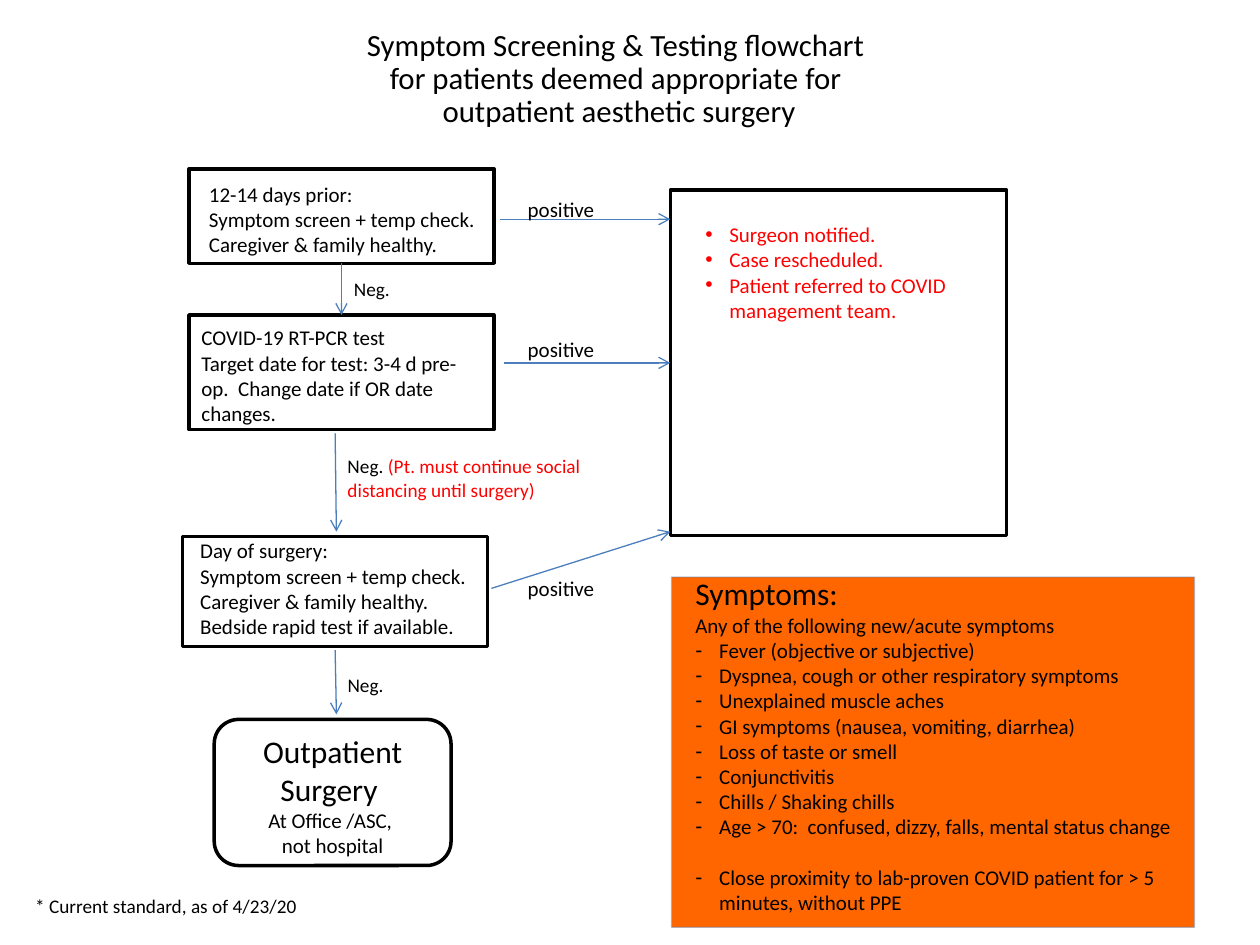
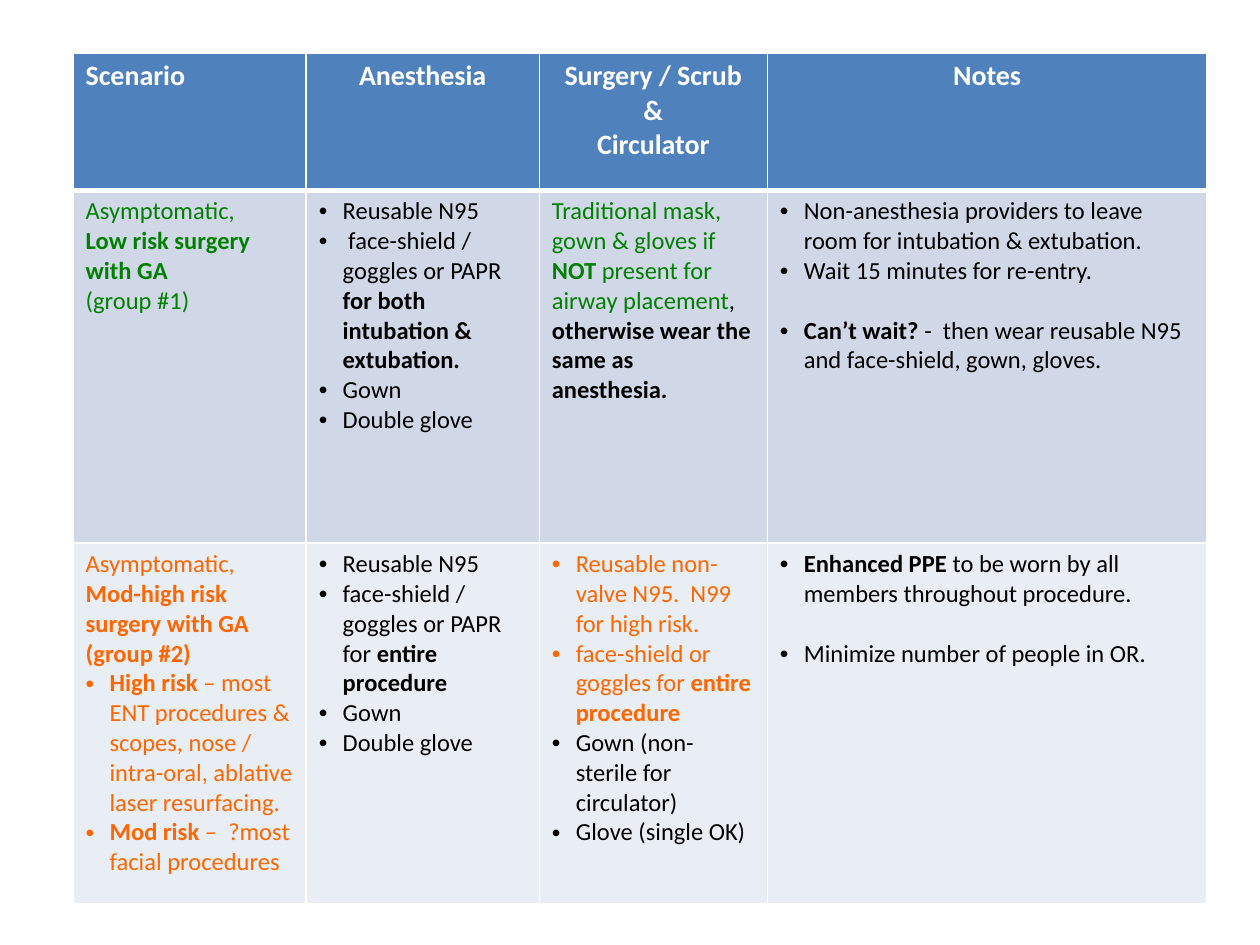
"""Build a surgery screening flowchart and a protective equipment table."""
import lxml.etree
import pptx
import pptx.dml.color
import pptx.enum.dml
import pptx.enum.shapes
import pptx.enum.text
import pptx.oxml
import pptx.oxml.ns
import pptx.util

SLIDE_WIDTH = pptx.util.Inches(10)
SLIDE_HEIGHT = pptx.util.Inches(7.5)
GRID_COLUMNS, GRID_ROWS = 100, 75
FONT = "Calibri"
BLACK, WHITE, RED, GREEN = "000000", "FFFFFF", "FF0000", "008000"
ORANGE, ARROW_BLUE, HEADER_BLUE = "FF6600", "4B7EBC", "4F81BD"
BAND_FILLS = ["D0D8E8", "E9EDF4"]
HANGING_INDENT = pptx.util.Inches(0.19)
LINE_FACTOR = 1.22
CENTER = pptx.enum.text.PP_ALIGN.CENTER
LEFT = pptx.enum.text.PP_ALIGN.LEFT
RECTANGLE = pptx.enum.shapes.MSO_SHAPE.RECTANGLE
ROUNDED = pptx.enum.shapes.MSO_SHAPE.ROUNDED_RECTANGLE


def across(columns):
    """Turn grid columns into a length."""
    return round(SLIDE_WIDTH * columns / GRID_COLUMNS)


def down(rows):
    """Turn grid rows into a length."""
    return round(SLIDE_HEIGHT * rows / GRID_ROWS)


def area(left, top, width, height):
    """Turn a grid area into a shape's position and size."""
    return across(left), down(top), across(width), down(height)


def paint(color_holder, color):
    """Apply a hex colour to a solid fill or a line."""
    if hasattr(color_holder, "solid"):
        color_holder.solid()
        color_holder.fore_color.rgb = pptx.dml.color.RGBColor.from_string(color)
    else:
        color_holder.color.rgb = pptx.dml.color.RGBColor.from_string(color)


def line(*parts, bullet=None, size=12, color=BLACK, align=LEFT, spacing=None, gap=0):
    """Describe a paragraph whose parts are texts or (text, colour) pairs."""
    return dict(parts=parts, bullet=bullet, size=size, color=color,
                align=align, spacing=spacing, gap=gap)


def bullets(*texts, mark="•", **style):
    """Describe one bulleted paragraph for each text."""
    return [line(text, bullet=mark, **style) for text in texts]


def split_bold(parts, color):
    """Yield text, colour and boldness, with bold marked by double asterisks."""
    for part in parts:
        text, part_color = (part, color) if isinstance(part, str) else part
        for index, piece in enumerate(text.split("**")):
            if piece:
                yield piece, part_color, index % 2 == 1


def add_bullet(paragraph, mark):
    """Give a paragraph a hanging bullet."""
    properties = paragraph._p.get_or_add_pPr()
    properties.set("marL", str(HANGING_INDENT))
    properties.set("indent", str(-HANGING_INDENT))
    for tag, name, value in [("a:buFont", "typeface", "Arial"), ("a:buChar", "char", mark)]:
        lxml.etree.SubElement(properties, pptx.oxml.ns.qn(tag)).set(name, value)


def write(frame, lines):
    """Fill a text frame with described paragraphs."""
    for index, item in enumerate(lines):
        paragraph = frame.add_paragraph() if index else frame.paragraphs[0]
        paragraph.alignment = item["align"]
        paragraph.line_spacing = item["spacing"]
        if item["gap"]:
            paragraph.space_after = pptx.util.Pt(item["gap"] * item["size"] * LINE_FACTOR)
        if item["bullet"]:
            add_bullet(paragraph, item["bullet"])
        for order, (text, color, bold) in enumerate(split_bold(item["parts"], item["color"])):
            if order:
                runs = [paragraph.add_run()]
                runs[0].text = text
            else:
                paragraph.text = text
                runs = paragraph.runs
            for run in runs:
                run.font.name = FONT
                run.font.size = pptx.util.Pt(item["size"])
                run.font.bold = bold
                paint(run.font.fill, color)


def add_words(slide, place, lines, anchor=pptx.enum.text.MSO_ANCHOR.TOP):
    """Add wrapped text on a grid area."""
    frame = slide.shapes.add_textbox(*area(*place)).text_frame
    frame.word_wrap = True
    frame.vertical_anchor = anchor
    write(frame, lines)


def add_box(slide, place, outline=RECTANGLE):
    """Add an unfilled box with a black border."""
    box = slide.shapes.add_shape(outline, *area(*place))
    box.shadow.inherit = False
    box.fill.background()
    paint(box.line, BLACK)
    box.line.width = pptx.util.Pt(2)
    return box


def add_symptom_panel(slide, place):
    """Add the orange panel with its faint border."""
    panel = slide.shapes.add_shape(RECTANGLE, *area(*place))
    panel.shadow.inherit = False
    paint(panel.fill, ORANGE)
    paint(panel.line, ARROW_BLUE)
    panel.line.width = pptx.util.Pt(0.75)
    border_color = panel.line._ln.find(".//" + pptx.oxml.ns.qn("a:srgbClr"))
    lxml.etree.SubElement(border_color, pptx.oxml.ns.qn("a:alpha")).set("val", "38000")


def add_arrow(slide, start, end, source=None, target=None):
    """Add an arrow, joined to (box, side) pairs where given."""
    arrow = slide.shapes.add_connector(
        pptx.enum.shapes.MSO_CONNECTOR.STRAIGHT,
        across(start[0]), down(start[1]), across(end[0]), down(end[1]))
    if source:
        arrow.begin_connect(*source)
    if target:
        arrow.end_connect(*target)
    paint(arrow.line, ARROW_BLUE)
    arrow.line.width = pptx.util.Pt(0.75)
    head = lxml.etree.SubElement(arrow.line._ln, pptx.oxml.ns.qn("a:tailEnd"))
    head.set("type", "arrow")
    lxml.etree.SubElement(arrow._element.spPr, pptx.oxml.ns.qn("a:effectLst"))


def set_borders(cell, top, bottom):
    """Give a cell white borders, with top and bottom widths in points."""
    properties = cell._tc.get_or_add_tcPr()
    widths = {"L": 1, "R": 1, "T": top, "B": bottom}
    for position, (side, width) in enumerate(widths.items()):
        border = pptx.oxml.parse_xml(
            f'<a:ln{side} {pptx.oxml.ns.nsdecls("a")} w="{pptx.util.Pt(width)}">'
            f'<a:solidFill><a:srgbClr val="{WHITE}"/></a:solidFill></a:ln{side}>')
        properties.insert(position, border)


def add_equipment_table(slide, place, column_widths, row_heights, rows):
    """Add the table with a blue header and pale rows."""
    table = slide.shapes.add_table(len(rows), len(column_widths), *area(*place)).table
    for column, width in zip(table.columns, column_widths):
        column.width = across(width)
    for row_index, (row, height) in enumerate(zip(rows, row_heights)):
        table.rows[row_index].height = down(height)
        for column_index, lines in enumerate(row):
            cell = table.cell(row_index, column_index)
            write(cell.text_frame, lines)
            paint(cell.fill, BAND_FILLS[row_index - 1] if row_index else HEADER_BLUE)
            set_borders(cell, 3 if row_index == 1 else 1, 1 if row_index else 3)


def build_flowchart(slide):
    """Draw the screening steps, their outcomes and the symptom list."""
    add_symptom_panel(slide, (53.3, 45.8, 41.5, 27.8))
    add_words(slide, (20.8, 1.7, 56.7, 9.2), [line(
        "Symptom Screening & Testing flowchart \nfor patients deemed appropriate for \n"
        "outpatient aesthetic surgery", size=17.6, align=CENTER, spacing=0.9)],
        pptx.enum.text.MSO_ANCHOR.MIDDLE)

    early_screen = add_box(slide, (15, 13.4, 24.2, 7.5))
    pcr_test = add_box(slide, (15, 25, 24.2, 9.1))
    add_box(slide, (14.5, 42.6, 24.2, 8.7))
    add_box(slide, (17, 57.1, 18.8, 11.6), ROUNDED)
    reschedule = add_box(slide, (53.2, 15.1, 26.7, 27.4))

    steps = [
        ((15.6, 13.9, 24.2, 7.1), ["12-14 days prior:", "Symptom screen + temp check.",
                                   "Caregiver & family healthy."]),
        ((15, 25.3, 24.2, 9.1), ["COVID-19 RT-PCR test",
                                 "Target date for test: 3-4 d pre-op.  Change date if OR date changes."]),
        ((14.9, 42.2, 24.2, 9.1), ["Day of surgery:",
                                   "Symptom screen + temp check.  Caregiver & family healthy.",
                                   "Bedside rapid test if available."]),
    ]
    for place, texts in steps:
        add_words(slide, place, [line(text) for text in texts])
    add_words(slide, (17, 57.6, 18.8, 11.1), [
        line("Outpatient Surgery ", size=18, align=CENTER),
        line("At Office /ASC, ", align=CENTER), line("not hospital", align=CENTER)])
    add_words(slide, (55, 17.1, 23.3, 9.1), bullets(
        "Surgeon notified.", "Case rescheduled.",
        "Patient referred to COVID management team.", color=RED))
    add_words(slide, (54.2, 45.1, 40.6, 28.5), [
        line("Symptoms:", size=18),
        line("Any of the following new/acute symptoms"),
        *bullets("Fever (objective or subjective)",
                 "Dyspnea, cough or other respiratory symptoms",
                 "Unexplained muscle aches",
                 "GI symptoms (nausea, vomiting, diarrhea)",
                 "Loss of taste or smell", "Conjunctivitis",
                 "Chills / Shaking chills", mark="-"),
        line("Age > 70:  confused, dizzy, falls, mental status change", bullet="-", gap=1),
        line("Close proximity to lab-proven COVID patient for > 5 minutes, without PPE",
             bullet="-")])

    add_arrow(slide, (39.7, 17.4), (53.2, 17.4))
    add_arrow(slide, (40, 28.8), (53.2, 28.8), target=(reschedule, 1))
    add_arrow(slide, (39, 46.7), (53.2, 42.2))
    add_arrow(slide, (27.1, 20.9), (27.1, 25), (early_screen, 2), (pcr_test, 0))
    add_arrow(slide, (26.6, 34.4), (26.7, 42.2))
    add_arrow(slide, (26.6, 51.6), (26.7, 56.7))

    for top in (15.1, 26.2, 45.2):
        add_words(slide, (40.9, top, 8.3, 3), [line("positive")])
    for left, top in ((27.1, 21.5), (26.6, 52.9)):
        add_words(slide, (left, top, 6.2, 2.9), [line("Neg.", size=11)])
    add_words(slide, (26.6, 35.6, 21.7, 4.7), [line(
        "Neg.", (" (Pt. must continue social distancing until surgery)", RED), size=11)])
    add_words(slide, (1.8, 70.5, 28.5, 2.9),
              [line("* Current standard, as of 4/23/20", size=11)])


def build_equipment(slide):
    """Draw the table of protective equipment by scenario."""
    heading = dict(size=16, color=WHITE, align=CENTER)
    body = dict(size=14)
    low, high = dict(size=14, color=GREEN), dict(size=14, color=ORANGE)
    header = [
        [line("**Scenario**", size=16, color=WHITE)],
        [line("**Anesthesia**", **heading)],
        [line("**Surgery / Scrub &**", **heading), line("**Circulator**", **heading)],
        [line("**Notes**", **heading)],
    ]
    low_risk = [
        [line("Asymptomatic,", **low), line("**Low risk surgery with GA**", **low),
         line("(group #1)", **low)],
        bullets("Reusable N95",
                " face-shield / goggles or PAPR** for both intubation & extubation.**",
                "Gown", "Double glove", **body),
        [line("Traditional mask, gown & gloves if **NOT** present for airway placement",
              (", **otherwise wear the same as anesthesia.**", BLACK), **low)],
        [line("Non-anesthesia providers to leave room for intubation & extubation.",
              bullet="•", **body),
         line("Wait 15 minutes for re-entry.", bullet="•", gap=1, **body),
         line("**Can’t wait? **-  then wear reusable N95 and face-shield, gown, gloves.",
              bullet="•", **body)],
    ]
    high_risk = [
        [line("Asymptomatic,", **high), line("**Mod-high risk surgery with GA**", **high),
         line("**(group #2)**", **high),
         *bullets("**High risk **– most ENT procedures & scopes, nose / intra-oral, "
                  "ablative laser resurfacing.",
                  "**Mod risk **–  ?most facial procedures", **high)],
        bullets("Reusable N95", "face-shield / goggles or PAPR for **entire procedure**",
                "Gown", "Double glove", **body),
        bullets("Reusable non-valve N95.  N99 for high risk.",
                "face-shield or goggles for **entire procedure**", **high)
        + bullets("Gown (non-sterile for circulator)", "Glove (single OK)", **body),
        [line("**Enhanced PPE** to be worn by all members throughout procedure.",
              bullet="•", gap=1, **body),
         line("Minimize number of people in OR.", bullet="•", **body)],
    ]
    add_equipment_table(slide, (5.8, 4.2, 90, 67.5), (18.5, 18.5, 18.1, 34.9),
                        (10.9, 28, 28.6), [header, low_risk, high_risk])


def main():
    """Build and save the presentation."""
    deck = pptx.Presentation()
    deck.slide_width, deck.slide_height = SLIDE_WIDTH, SLIDE_HEIGHT
    for build in (build_flowchart, build_equipment):
        build(deck.slides.add_slide(deck.slide_layouts[6]))
    deck.save("out.pptx")


if __name__ == "__main__":
    main()
